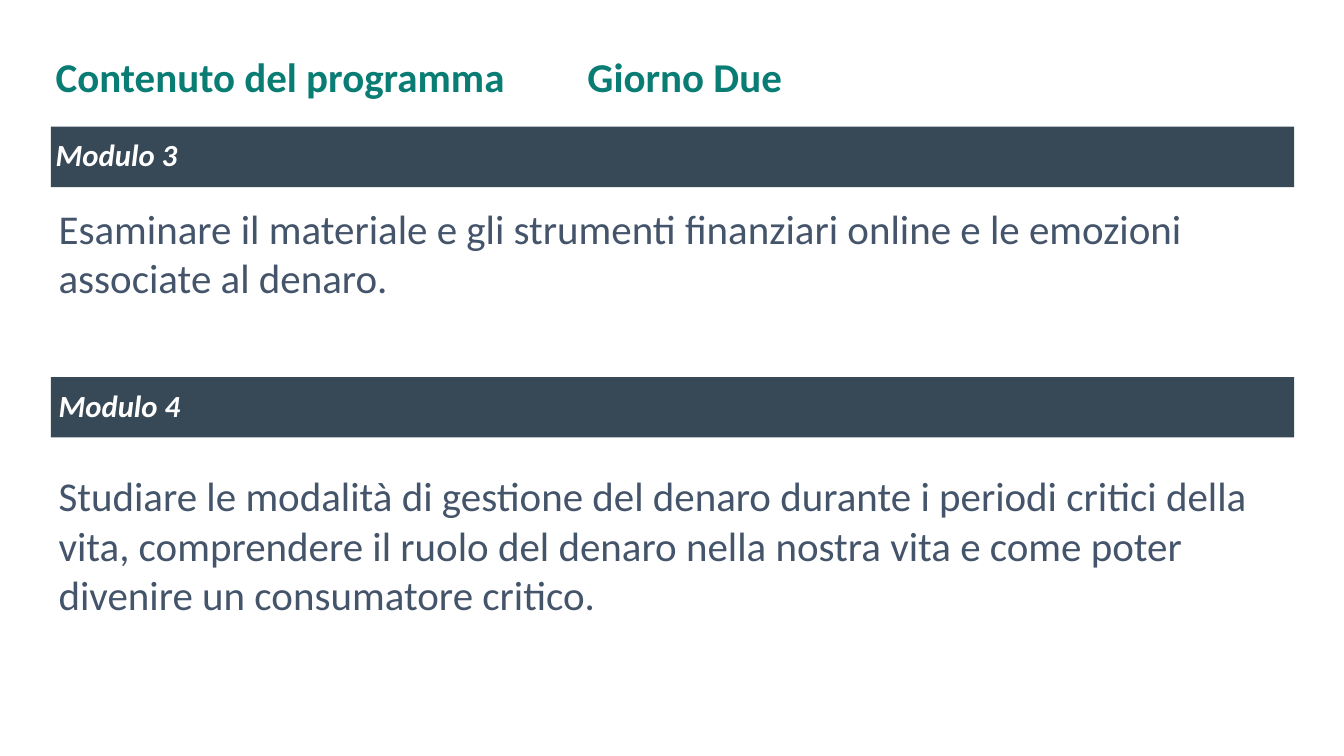
from dataclasses import dataclass

from lxml import etree
from pptx import Presentation
from pptx.dml.color import RGBColor
from pptx.enum.shapes import MSO_SHAPE
from pptx.enum.text import MSO_ANCHOR, MSO_AUTO_SIZE, PP_ALIGN
from pptx.oxml.ns import qn
from pptx.util import Emu, Pt

RECTANGLE = MSO_SHAPE.RECTANGLE
TOP, MIDDLE = MSO_ANCHOR.TOP, MSO_ANCHOR.MIDDLE
NO_AUTOFIT = MSO_AUTO_SIZE.NONE
LEFT, JUSTIFY = PP_ALIGN.LEFT, PP_ALIGN.JUSTIFY
TITLE_ONLY = 5
EMU_PER_PX = 9525
INSET = 5
BAR_LEFT, BAR_WIDTH, BAR_HEIGHT = 53, 1295, 63
TEXT_LEFT, TEXT_WIDTH, TEXT_HEIGHT = 56, 1289, 165


@dataclass(frozen=True)
class Theme:
    """Colours, font and type sizes of the slide."""
    font: str = "Calibri"
    title: str = "097D74"
    bar: str = "374856"
    label: str = "FFFFFF"
    body: str = "44546A"
    large: int = 32
    small: int = 24


THEME = Theme()

MODULES = (
    ("Modulo 3", 132, 5, 207,
     "Esaminare il materiale e gli strumenti finanziari online e le emozioni "
     "associate al denaro."),
    ("Modulo 4", 393, 8, 486,
     "Studiare le modalità di gestione del denaro durante i periodi critici "
     "della vita, comprendere il ruolo del denaro nella nostra vita e come "
     "poter divenire un consumatore critico."),
)


def px(length):
    """Turn px into EMU."""
    return Emu(length * EMU_PER_PX)


def set_frame(box, anchor, left_inset=INSET):
    """Set wrapping, anchor and insets, and return the first paragraph."""
    frame = box.text_frame
    frame.word_wrap = True
    frame.auto_size = NO_AUTOFIT
    frame.vertical_anchor = anchor
    frame.margin_left = px(left_inset)
    frame.margin_right = frame.margin_top = frame.margin_bottom = px(INSET)
    return frame.paragraphs[0]


def add_span(para, text, size, colour, bold=False, italic=False):
    """Add one formatted run to a paragraph."""
    span = para.add_run()
    span.text = text
    span.font.name = THEME.font
    span.font.size = Pt(size)
    span.font.color.rgb = RGBColor.from_string(colour)
    span.font.bold = bold
    span.font.italic = italic


def add_tab_stop(para, position):
    """Add a left tab stop to a paragraph."""
    tabs = etree.SubElement(para._p.get_or_add_pPr(), qn("a:tabLst"))
    etree.SubElement(tabs, qn("a:tab"), pos=str(px(position)), algn="l")


def fill_title(page, programme, day):
    """Place the title and set the day at a tab stop."""
    title = page.shapes.title
    title.left, title.top = px(BAR_LEFT), px(45)
    title.width, title.height = px(BAR_WIDTH), px(76)
    para = set_frame(title, MIDDLE)
    add_tab_stop(para, 554)
    para.alignment = LEFT
    para.line_spacing = 0.9
    for text in (programme, "\t" + day):
        add_span(para, text, THEME.large, THEME.title, bold=True)


def add_bar(page, label, top, left_inset):
    """Add a dark bar with a module label."""
    bar = page.shapes.add_shape(
        RECTANGLE, px(BAR_LEFT), px(top), px(BAR_WIDTH), px(BAR_HEIGHT))
    bar.shadow.inherit = False
    bar.fill.solid()
    bar.fill.fore_color.rgb = RGBColor.from_string(THEME.bar)
    bar.line.fill.background()
    para = set_frame(bar, MIDDLE, left_inset)
    para.alignment = JUSTIFY
    para.line_spacing = 0.9
    add_span(para, label, THEME.small, THEME.label, bold=True, italic=True)


def add_description(page, text, top):
    """Add the text that describes a module."""
    box = page.shapes.add_textbox(
        px(TEXT_LEFT), px(top), px(TEXT_WIDTH), px(TEXT_HEIGHT))
    para = set_frame(box, TOP)
    para.alignment = LEFT
    add_span(para, text, THEME.large, THEME.body)


def main():
    """Build and save the slide."""
    deck = Presentation()
    deck.slide_width, deck.slide_height = px(1400), px(788)
    page = deck.slides.add_slide(deck.slide_layouts[TITLE_ONLY])
    fill_title(page, "Contenuto del programma", "Giorno Due")
    for label, bar_top, left_inset, text_top, text in MODULES:
        add_bar(page, label, bar_top, left_inset)
        add_description(page, text, text_top)
    deck.save("out.pptx")


if __name__ == "__main__":
    main()
